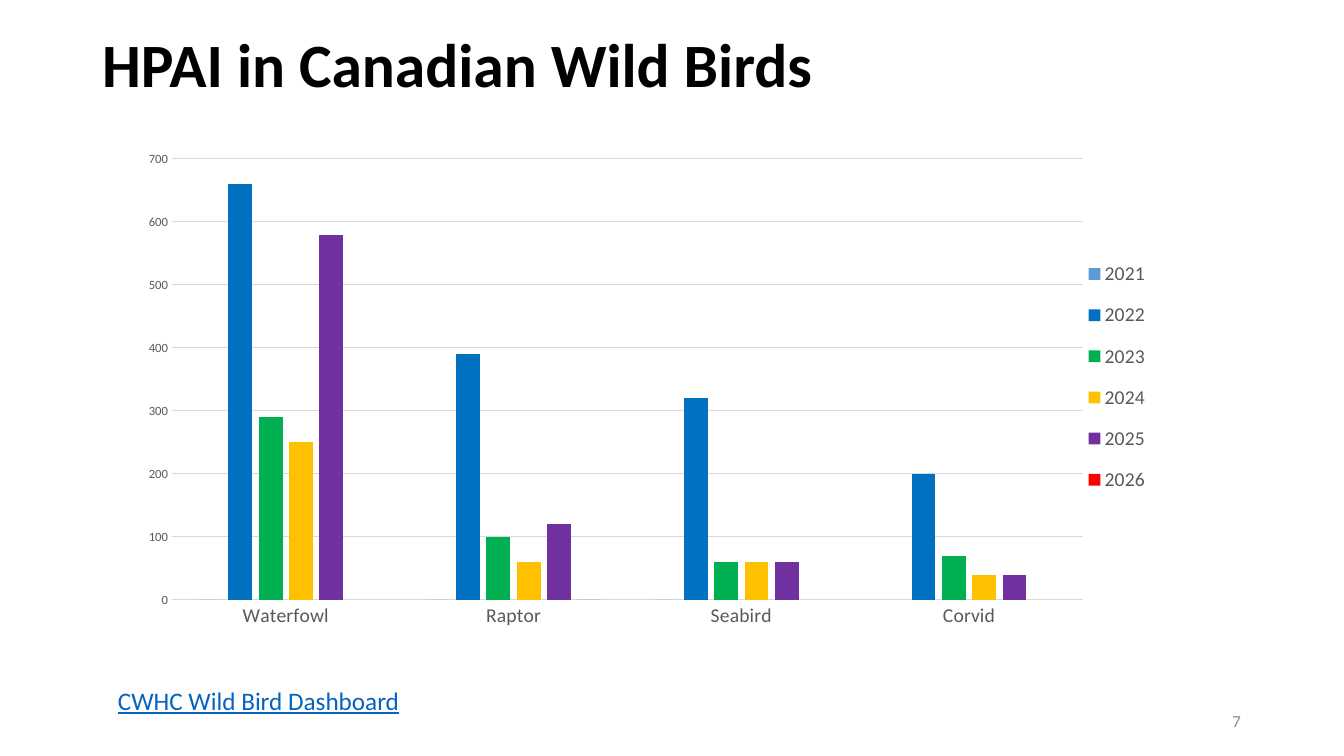
from pptx import Presentation
from pptx.chart.data import CategoryChartData
from pptx.dml.color import RGBColor
from pptx.enum.chart import XL_CHART_TYPE, XL_LEGEND_POSITION, XL_TICK_MARK
from pptx.enum.text import MSO_ANCHOR, MSO_AUTO_SIZE, PP_ALIGN
from pptx.oxml import parse_xml
from pptx.oxml.ns import nsdecls
from pptx.util import Emu, Pt

CLUSTERED = XL_CHART_TYPE.COLUMN_CLUSTERED
LEGEND_RIGHT = XL_LEGEND_POSITION.RIGHT
NO_TICK = XL_TICK_MARK.NONE
TOP, MIDDLE = MSO_ANCHOR.TOP, MSO_ANCHOR.MIDDLE
LEFT, RIGHT = PP_ALIGN.LEFT, PP_ALIGN.RIGHT
NO_AUTOFIT = MSO_AUTO_SIZE.NONE

EMU_PER_PX = 914400 / 100.8
FONT = "Calibri"
CHART_BOUNDS = (128, 141, 1054, 496)
PLOT_BOUNDS = (44, 18, 911, 441)
LEGEND_BOUNDS = (947, 104, 84, 264)
COLORS = {
    "title": "000000", "number": "8C8C8C", "link": "0563C1",
    "label": "595959", "grid": "D9D9D9",
    "2021": "5B9BD5", "2022": "0070C0", "2023": "00B050",
    "2024": "FFC000", "2025": "7030A0", "2026": "FF0000",
}
BIRDS = ["Waterfowl", "Raptor", "Seabird", "Corvid"]
CASES = {
    "2021": [0, 0, 0, None],
    "2022": [660, 390, 320, 200],
    "2023": [290, 100, 60, 70],
    "2024": [250, 60, 60, 40],
    "2025": [580, 120, 60, 40],
    "2026": [None, 0, None, None],
}


def px(length):
    return Emu(round(length * EMU_PER_PX))


def color(name):
    return RGBColor.from_string(COLORS[name])


def style_font(font, size, color_name):
    font.name = FONT
    font.size = Pt(size)
    font.color.rgb = color(color_name)


def fill_text(box, text, size, color_name, anchor=MIDDLE, align=LEFT):
    frame = box.text_frame
    frame.word_wrap = True
    frame.auto_size = NO_AUTOFIT
    frame.vertical_anchor = anchor
    para = frame.paragraphs[0]
    para.alignment = align
    span = para.add_run()
    span.text = text
    style_font(span.font, size, color_name)
    return para, span


def add_title(page, text, left, top, width, height):
    title = page.shapes.title
    title.left, title.top = px(left), px(top)
    title.width, title.height = px(width), px(height)
    para, span = fill_text(title, text, 44, "title")
    para.line_spacing = 0.9
    span.font.bold = True


def add_text(page, text, bounds, size, color_name, **placing):
    box = page.shapes.add_textbox(*map(px, bounds))
    para, span = fill_text(box, text, size, color_name, **placing)
    return span


def manual_layout(bounds, target=""):
    chart_width, chart_height = CHART_BOUNDS[2:]
    left, top, width, height = bounds
    return parse_xml(
        f'<c:layout {nsdecls("c")}><c:manualLayout>{target}'
        '<c:xMode val="edge"/><c:yMode val="edge"/>'
        f'<c:x val="{left / chart_width}"/><c:y val="{top / chart_height}"/>'
        f'<c:w val="{width / chart_width}"/><c:h val="{height / chart_height}"/>'
        '</c:manualLayout></c:layout>')


def place_chart_parts(chart):
    space = chart.element
    for layout in space.xpath(".//c:plotArea/c:layout | .//c:legend/c:layout"):
        layout.getparent().remove(layout)
    inner = '<c:layoutTarget val="inner"/>'
    plot_area = space.xpath(".//c:plotArea")[0]
    plot_area.insert(0, manual_layout(PLOT_BOUNDS, inner))
    legend_side = space.xpath(".//c:legend/c:legendPos")[0]
    legend_side.addnext(manual_layout(LEGEND_BOUNDS))


def style_axis(axis, size):
    axis.major_tick_mark = NO_TICK
    axis.minor_tick_mark = NO_TICK
    style_font(axis.tick_labels.font, size, "label")


def style_line(line):
    line.color.rgb = color("grid")
    line.width = Pt(0.75)


def add_case_chart(page):
    data = CategoryChartData(number_format="General")
    data.categories = BIRDS
    for year, counts in CASES.items():
        data.add_series(year, counts)
    chart = page.shapes.add_chart(CLUSTERED, *map(px, CHART_BOUNDS), data).chart
    chart.has_title = False
    style_font(chart.font, 10, "title")

    plot = chart.plots[0]
    plot.gap_width, plot.overlap = 219, -27
    plot.vary_by_categories = False
    for series in plot.series:
        series.invert_if_negative = False
        series.format.fill.solid()
        series.format.fill.fore_color.rgb = color(series.name)

    style_axis(chart.category_axis, 14)
    style_line(chart.category_axis.format.line)
    value_axis = chart.value_axis
    style_axis(value_axis, 9)
    value_axis.minimum_scale, value_axis.maximum_scale = 0, 700
    value_axis.major_unit = 100
    value_axis.format.line.fill.background()
    style_line(value_axis.major_gridlines.format.line)

    chart.has_legend = True
    chart.legend.position = LEGEND_RIGHT
    chart.legend.include_in_layout = False
    style_font(chart.legend.font, 14, "label")
    place_chart_parts(chart)


def main():
    deck = Presentation()
    deck.slide_width, deck.slide_height = px(1344), px(756)
    page = deck.slides.add_slide(deck.slide_layouts.get_by_name("Title Only"))
    add_title(page, "HPAI in Canadian Wild Birds", 92, 15, 1159, 106)
    add_text(page, "7", (949, 701, 302, 40), 12, "number", align=RIGHT)
    link = add_text(page, "CWHC Wild Bird Dashboard", (108, 680, 1030, 40),
                    18, "link", anchor=TOP)
    link.font.underline = True
    add_case_chart(page)
    deck.save("out.pptx")


if __name__ == "__main__":
    main()
